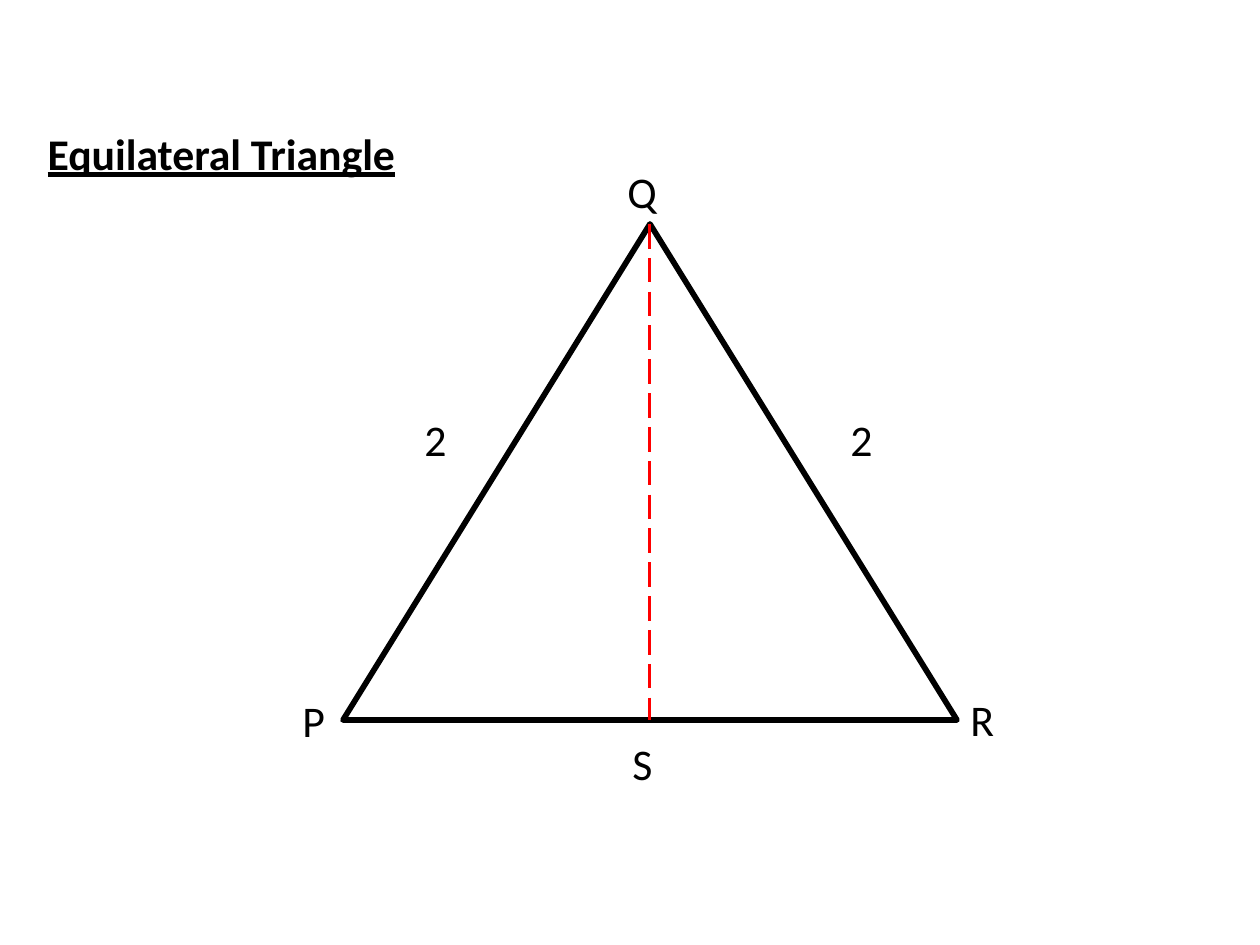
from typing import NamedTuple

from pptx import Presentation
from pptx.dml.color import RGBColor
from pptx.enum.dml import MSO_LINE_DASH_STYLE as Dash
from pptx.enum.shapes import MSO_CONNECTOR as Connector, MSO_SHAPE as Shape
from pptx.enum.text import MSO_ANCHOR as Anchor, MSO_AUTO_SIZE as AutoSize, PP_ALIGN as Align
from pptx.oxml.ns import qn
from pptx.util import Pt

EMU_PER_PX = 914400 // 126
COLORS = {"ink": "000000", "height": "FF0000"}
FONT, FONT_SIZE, TEXT_HEIGHT = "Calibri", 25, 66
TITLE_ONLY = 5


class Label(NamedTuple):
    text: str
    left: int
    top: int
    width: int


TITLE = Label("Equilateral Triangle", 35, 120, 397)
LABELS = [
    Label("Q", 615, 159, 69),
    Label("P", 290, 688, 49),
    Label("R", 958, 687, 69),
    Label("2", 838, 407, 59),
    Label("2", 412, 407, 59),
    Label("S", 620, 731, 59),
]
TRIANGLE_LEFT, TRIANGLE_TOP = 343, 224
TRIANGLE_WIDTH, TRIANGLE_HEIGHT = 614, 496


def px(length: int) -> int:
    return length * EMU_PER_PX


def color(name: str) -> RGBColor:
    return RGBColor.from_string(COLORS[name])


def write_label(box, label: Label, emphasized: bool = False) -> None:
    """Place a box and fill it with one line of text."""
    box.left, box.top = px(label.left), px(label.top)
    box.width, box.height = px(label.width), px(TEXT_HEIGHT)
    frame = box.text_frame
    frame.text = label.text
    frame.word_wrap = True
    frame.auto_size = AutoSize.SHAPE_TO_FIT_TEXT
    frame.vertical_anchor = Anchor.TOP
    para = frame.paragraphs[0]
    para.alignment = Align.LEFT
    para.line_spacing = 1.0
    para.space_before = Pt(0)
    font = para.runs[0].font
    font.name, font.size = FONT, Pt(FONT_SIZE)
    font.color.rgb = color("ink")
    if emphasized:
        font.bold = font.underline = True


def draw_triangle(page):
    triangle = page.shapes.add_shape(
        Shape.ISOSCELES_TRIANGLE, px(TRIANGLE_LEFT), px(TRIANGLE_TOP),
        px(TRIANGLE_WIDTH), px(TRIANGLE_HEIGHT))
    triangle.shadow.inherit = False
    triangle.fill.background()
    triangle.line.color.rgb = color("ink")
    triangle.line.width = Pt(3.25)
    return triangle


def draw_height(page, triangle) -> None:
    """Drop a dashed line from the apex to the middle of the base."""
    middle = triangle.left + triangle.width // 2
    height = page.shapes.add_connector(
        Connector.STRAIGHT, middle, triangle.top, middle, triangle.top + triangle.height)
    height.begin_connect(triangle, 0)
    height.line.color.rgb = color("height")
    height.line.width = Pt(1.75)
    height.line.dash_style = Dash.LONG_DASH
    properties = height._element.spPr
    properties.append(properties.makeelement(qn("a:effectLst"), {}))


def main() -> None:
    deck = Presentation()
    deck.slide_width, deck.slide_height = px(1260), px(945)
    page = deck.slides.add_slide(deck.slide_layouts[TITLE_ONLY])
    write_label(page.shapes.title, TITLE, emphasized=True)
    draw_height(page, draw_triangle(page))
    for label in LABELS:
        write_label(page.shapes.add_textbox(0, 0, 0, 0), label)
    deck.save("out.pptx")


if __name__ == "__main__":
    main()
